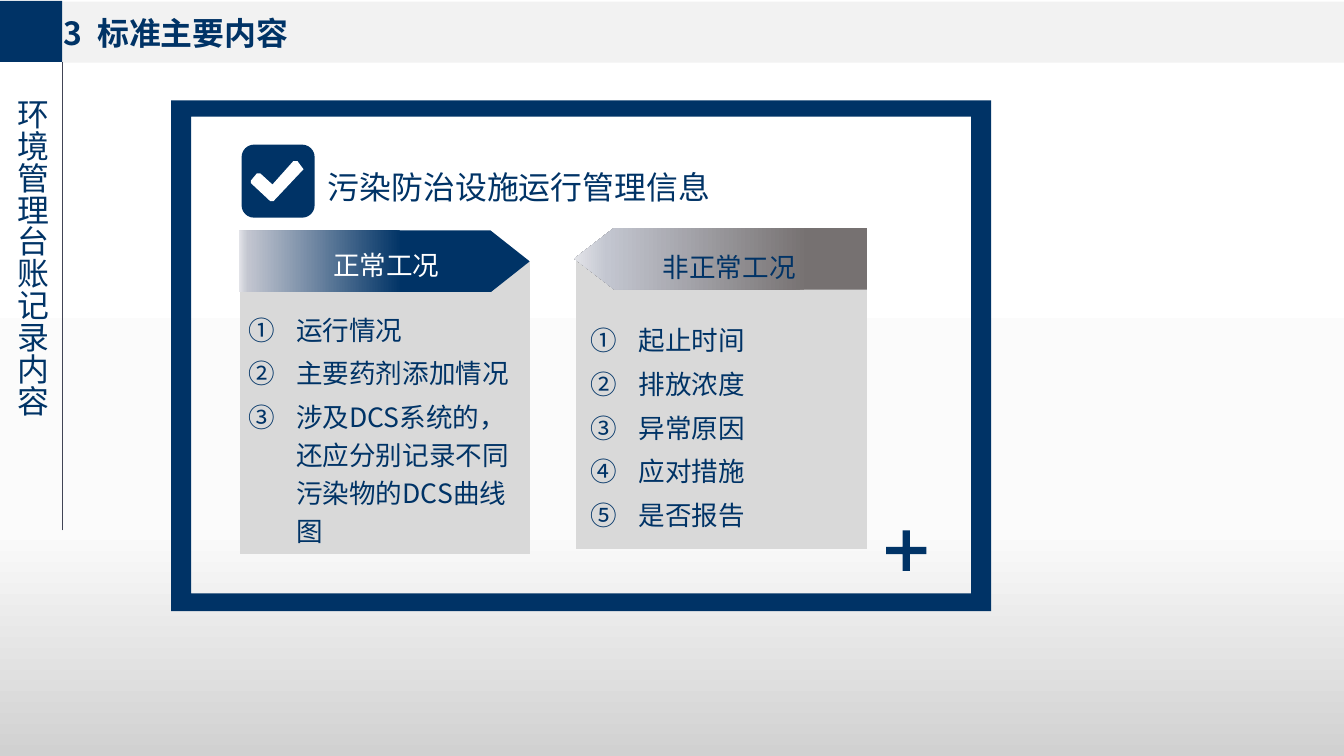
from copy import deepcopy
from dataclasses import dataclass

from lxml.etree import SubElement
from pptx import Presentation
from pptx.dml.color import RGBColor
from pptx.enum.shapes import MSO_CONNECTOR, MSO_SHAPE
from pptx.enum.text import MSO_ANCHOR as Anchor, MSO_AUTO_SIZE as AutoSize, PP_ALIGN as Align
from pptx.oxml.ns import qn
from pptx.util import Pt


@dataclass(frozen=True)
class Theme:
    navy: str = "003366"
    white: str = "FFFFFF"
    band: str = "F2F2F2"
    card: str = "D9D9D9"
    rule: str = "414455"
    backdrop: tuple = ((14, "FFFFFF"), (70, "FBFBFB"), (100, "D1D1D1"))
    normal: tuple = ((44, "003366"), (97, "C3C6D0"), (100, "E2E3E8"))
    abnormal: tuple = ((20, "767171"), (89, "C3C6D0"), (100, "E2E3E8"))
    heading_size: int = 24
    body_size: int = 20
    font: str = "Noto Sans CJK SC"
    heading_font: str = "Roboto Condensed"


theme = Theme()
presentation = Presentation()
presentation.slide_width, presentation.slide_height = Pt(1012.32), Pt(569.52)
slide = presentation.slides.add_slide(presentation.slide_layouts[5])
shapes = slide.shapes


def add_outline(contours, color):
    first, *others = contours
    builder = shapes.build_freeform(Pt(first[0][0]), Pt(first[0][1]))
    builder.add_line_segments([(Pt(x), Pt(y)) for x, y in first[1:]])
    for contour in others:
        builder.move_to(Pt(contour[0][0]), Pt(contour[0][1]))
        builder.add_line_segments([(Pt(x), Pt(y)) for x, y in contour[1:]])
    shape = builder.convert_to_shape()
    shape.shadow.inherit = False
    shape.fill.solid()
    shape.fill.fore_color.rgb = RGBColor.from_string(color)
    shape.line.fill.background()
    return shape


def write(shape, box, lines, size, color=theme.navy, font=theme.font, bold=False,
          align=Align.LEFT, anchor=Anchor.TOP, spacing=1.0, before=0, margins=(0, 0), numbered=False):
    shape.left, shape.top, shape.width, shape.height = [Pt(value) for value in box]
    frame = shape.text_frame
    frame.word_wrap, frame.auto_size, frame.vertical_anchor = True, AutoSize.NONE, anchor
    frame.margin_left = frame.margin_right = Pt(margins[0])
    frame.margin_top = frame.margin_bottom = Pt(margins[1])
    for index, line in enumerate(lines):
        paragraph = frame.add_paragraph() if index else frame.paragraphs[0]
        paragraph.alignment, paragraph.line_spacing = align, spacing
        paragraph.space_before = Pt(before)
        if numbered:
            properties = paragraph._p.get_or_add_pPr()
            properties.set("marL", str(Pt(36)))
            properties.set("indent", str(Pt(-36)))
            SubElement(properties, qn("a:buAutoNum")).set("type", "circleNumDbPlain")
        run = paragraph.add_run()
        run.text = line
        run.font.size, run.font.bold, run.font.name = Pt(size), bold, font
        run.font.color.rgb = RGBColor.from_string(color)
        SubElement(run._r.get_or_add_rPr(), qn("a:ea")).set("typeface", font)


presets = [
    (MSO_SHAPE.RECTANGLE, (46.8, 1.2, 965.52, 46), theme.band, None),
    (MSO_SHAPE.RECTANGLE, (0, 0.7, 46.8, 46), theme.navy, None),
    (MSO_SHAPE.ROUNDED_RECTANGLE, (182, 109, 55, 55), theme.navy, 0.17),
    (MSO_SHAPE.CROSS, (667.4, 399.6, 30.4, 30.4), theme.navy, 0.41),
]
for kind, box, color, adjustment in presets:
    shape = shapes.add_shape(kind, *[Pt(value) for value in box])
    shape.shadow.inherit = False
    shape.fill.solid()
    shape.fill.fore_color.rgb = RGBColor.from_string(color)
    shape.line.fill.background()
    if adjustment is not None:
        shape.adjustments[0] = adjustment

side_rule = shapes.add_connector(MSO_CONNECTOR.STRAIGHT, Pt(46.8), Pt(399.6), Pt(46.8), Pt(46.8))
side_rule.line.width = Pt(0.25)
side_rule.line.color.rgb = RGBColor.from_string(theme.rule)
SubElement(side_rule._element.spPr, qn("a:effectLst"))

check_mark = [(228.6, 127.5), (224, 121.3), (221, 121.3), (205.2, 139),
              (196, 130.6), (193.5, 130.6), (189, 136), (189, 138), (203.5, 151.5), (206, 151.5)]
add_outline([check_mark], theme.white)
window_frame = [
    [(128.9, 75.6), (746.6, 75.6), (746.6, 460.5), (128.9, 460.5)],
    [(144, 87.8), (144, 447.1), (731.5, 447.1), (731.5, 87.8)],
]
add_outline(window_frame, theme.navy)

gradients = [(slide.background.fill, slide.background._cSld, theme.backdrop, 270)]
cards = [
    ((180.5, 197.3, 399, 417.6), (180, 369.4, 399), 173.5, theme.normal),
    ((434.2, 193, 653, 413.3), (653, 463, 432.7), 171.4, theme.abnormal),
]
for (left, top, right, bottom), (tail, shoulder, tip), arrow_top, stops in cards:
    add_outline([[(left, top), (right, top), (right, bottom), (left, bottom)]], theme.card)
    arrow_bottom = arrow_top + 46.8
    arrow = add_outline([[(tail, arrow_top), (shoulder, arrow_top), (tip, arrow_top + 23.4),
                          (shoulder, arrow_bottom), (tail, arrow_bottom)]], theme.navy)
    gradients.append((arrow.fill, arrow._element.spPr, stops, 180))

for fill, owner, stops, angle in gradients:
    fill.gradient()
    fill.gradient_angle = angle
    stop_list = next(owner.iter(qn("a:gsLst")))
    stop_list.append(deepcopy(stop_list[0]))
    for stop, (position, color) in zip(fill.gradient_stops, stops):
        stop.position = position / 100
        stop.color.rgb = RGBColor.from_string(color)

title = shapes.title
shapes._spTree.append(title._element)
write(title, (48.2, 10, 220, 30), ["3  标准主要内容"], theme.heading_size, bold=True)

side_label = shapes.add_textbox(0, 0, 0, 0)
write(side_label, (10.1, 74.2, 28.8, 386), ["环境管理台账记录内容"], theme.heading_size)
side_label.text_frame._txBody.bodyPr.set("vert", "eaVert")

write(shapes.add_textbox(0, 0, 0, 0), (239.8, 108.7, 330, 51), ["污染防治设施运行管理信息"],
      theme.heading_size, font=theme.heading_font, spacing=1.5, margins=(7.2, 3.6))

card_text = dict(size=theme.body_size, anchor=Anchor.MIDDLE, spacing=1.2, before=4, margins=(7.2, 3.6))
for box, label, color in [((182.2, 180.7, 217.4, 32.4), "正常工况", theme.white),
                          ((440.6, 182.2, 217.4, 32.4), "非正常工况", theme.navy)]:
    write(shapes.add_textbox(0, 0, 0, 0), box, [label], color=color, align=Align.CENTER, **card_text)

records = [
    ((180, 226, 217.4, 191.5),
     ["运行情况", "主要药剂添加情况", "涉及DCS系统的， 还应分别记录不同污染物的DCS曲线图"]),
    ((437.8, 226, 217.4, 187.2),
     ["起止时间", "排放浓度", "异常原因", "应对措施", "是否报告"]),
]
for box, items in records:
    write(shapes.add_textbox(0, 0, 0, 0), box, items, numbered=True, **card_text)

presentation.save("out.pptx")
